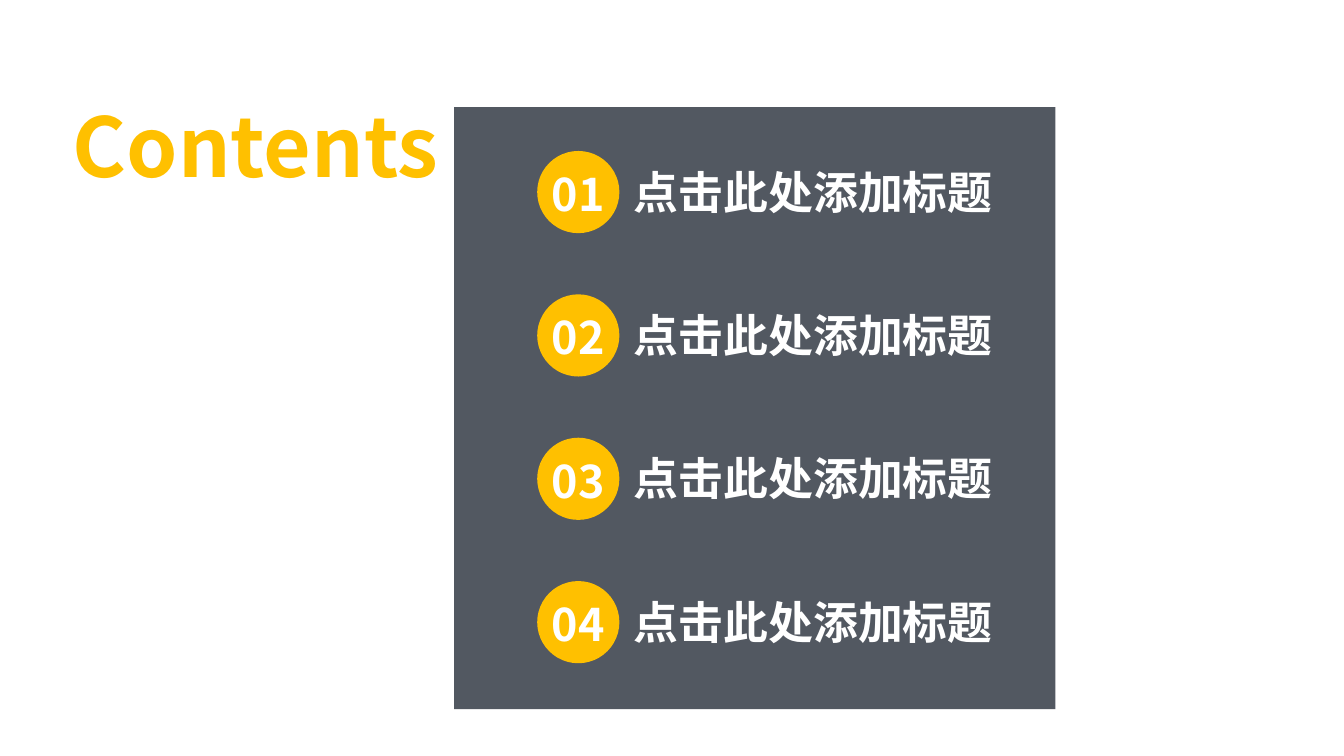
import pptx
import pptx.dml.color
import pptx.enum.shapes
import pptx.enum.text
import pptx.oxml.ns
import pptx.util
from lxml import etree

Inches = pptx.util.Inches
Shape = pptx.enum.shapes.MSO_SHAPE
Anchor = pptx.enum.text.MSO_ANCHOR
Align = pptx.enum.text.PP_ALIGN
Fit = pptx.enum.text.MSO_AUTO_SIZE

FONT = "Noto Sans CJK SC"
COLORS = {"slate": "222A35", "gold": "FFC000", "white": "FFFFFF"}
ITEMS = ["点击此处添加标题"] * 4
TOP, STEP = 1.58, 1.5


def apply(target, values):
    """Set each named value as an attribute of the target."""
    for name, value in values.items():
        setattr(target, name, value)


def write(shape, text, size, color, align, frame):
    """Put one bold line of text in a shape."""
    body = shape.text_frame
    apply(body, frame)
    line = body.paragraphs[0]
    line.alignment = align
    run = line.add_run()
    run.text = text
    apply(run.font, {"name": FONT, "size": pptx.util.Pt(size), "bold": True})
    run.font.color.rgb = pptx.dml.color.RGBColor.from_string(COLORS[color])
    east = etree.SubElement(run._r.get_or_add_rPr(), pptx.oxml.ns.qn("a:ea"))
    east.set("typeface", FONT)


def block(slide, kind, box, color, alpha=100):
    """Add a plain filled shape with a given opacity in percent."""
    shape = slide.shapes.add_shape(kind, *map(Inches, box))
    shape.shadow.inherit = False
    shape.line.fill.background()
    shape.fill.solid()
    shape.fill.fore_color.rgb = pptx.dml.color.RGBColor.from_string(COLORS[color])
    if alpha < 100:
        tone = shape.fill._xPr.find(".//" + pptx.oxml.ns.qn("a:srgbClr"))
        etree.SubElement(tone, pptx.oxml.ns.qn("a:alpha")).set("val", str(alpha * 1000))
    return shape


def heading(slide, text):
    """Move and fill the title placeholder."""
    title = slide.shapes.title
    apply(title, {"left": Inches(0.66), "top": Inches(0.95),
                  "width": Inches(6.72), "height": Inches(1.14)})
    write(title, text, 61.9, "gold", Align.LEFT,
          {"word_wrap": True, "vertical_anchor": Anchor.TOP,
           "auto_size": Fit.SHAPE_TO_FIT_TEXT})
    slide.shapes._spTree.append(title._element)


def entry(slide, number, text):
    """Add a numbered circle and its label."""
    top = TOP + (number - 1) * STEP
    disc = block(slide, Shape.OVAL, (5.62, top, 0.86, 0.86), "gold")
    write(disc, f"{number:02}", 33.8, "white", Align.CENTER,
          {"word_wrap": False, "vertical_anchor": Anchor.MIDDLE,
           "margin_left": 0, "margin_right": 0,
           "margin_top": Inches(0.03), "margin_bottom": 0})
    label = slide.shapes.add_textbox(*map(Inches, (6.49, top + 0.07, 4.07, 0.71)))
    write(label, text, 33.8, "white", Align.LEFT,
          {"word_wrap": False, "auto_size": Fit.SHAPE_TO_FIT_TEXT,
           "margin_left": Inches(0.14), "margin_right": Inches(0.14),
           "margin_top": Inches(0.07), "margin_bottom": Inches(0.07)})


def main():
    """Build the contents slide."""
    deck = pptx.Presentation()
    apply(deck, {"slide_width": Inches(14.06), "slide_height": Inches(7.91)})
    slide = deck.slides.add_slide(deck.slide_layouts[5])
    block(slide, Shape.RECTANGLE, (4.75, 1.12, 6.29, 6.3), "slate", 78)
    heading(slide, "Contents")
    for number, text in enumerate(ITEMS, 1):
        entry(slide, number, text)
    deck.save("out.pptx")


if __name__ == "__main__":
    main()
